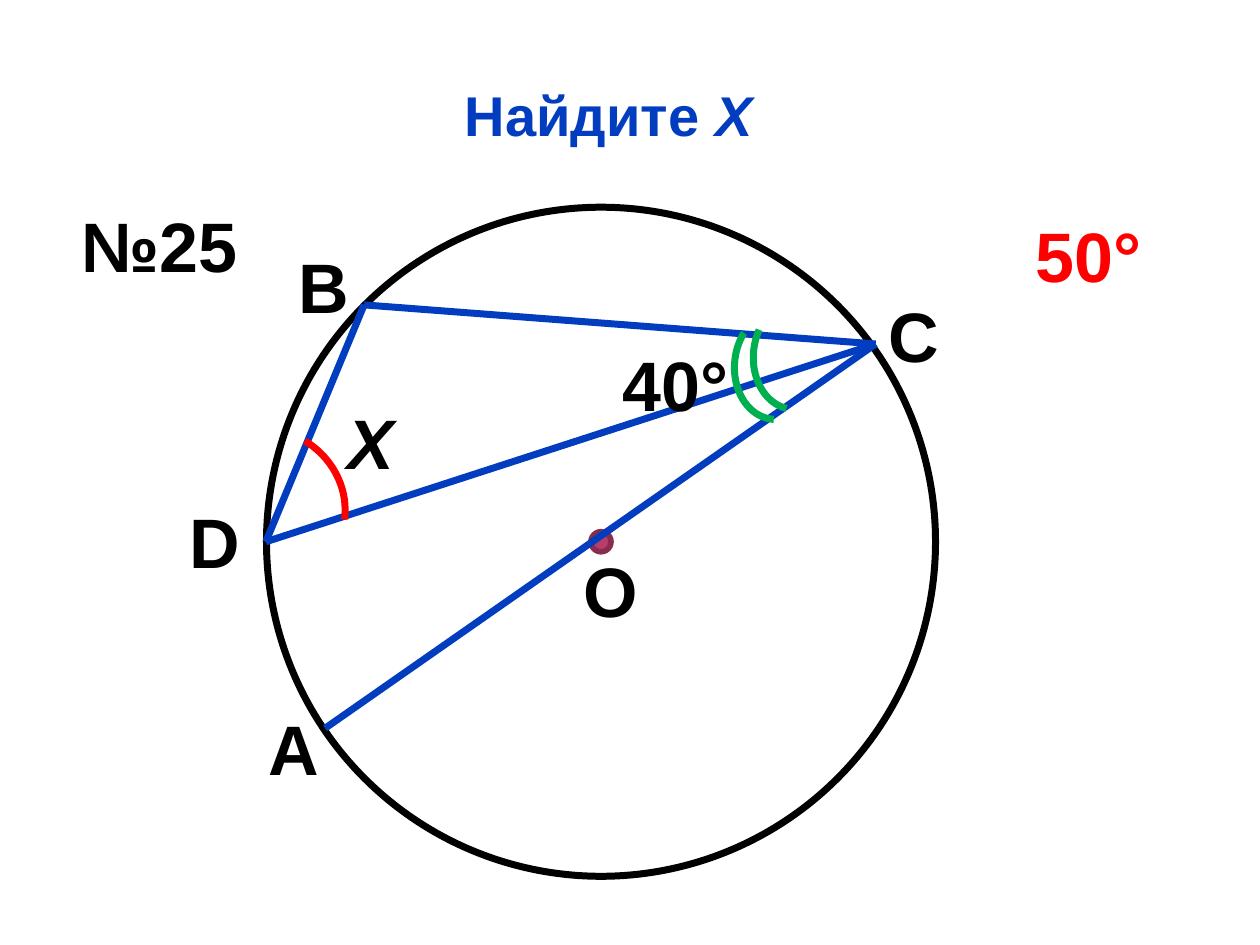
from lxml import etree
from pptx import Presentation
from pptx.dml.color import RGBColor
from pptx.enum.shapes import MSO_CONNECTOR, MSO_SHAPE
from pptx.enum.text import MSO_ANCHOR, PP_ALIGN
from pptx.oxml.ns import qn
from pptx.util import Inches, Pt

STRAIGHT = MSO_CONNECTOR.STRAIGHT
OVAL, ARC = MSO_SHAPE.OVAL, MSO_SHAPE.ARC
LEFT, CENTER = PP_ALIGN.LEFT, PP_ALIGN.CENTER
TOP, BOTTOM = MSO_ANCHOR.TOP, MSO_ANCHOR.BOTTOM

BLACK, BLUE, RED, GREEN = "000000", "033DBF", "FF0000", "00B050"
LINE_WIDTH = 4
LABEL_HEIGHT = 0.77
ARC_UNITS_PER_DEGREE = 0.6

TITLE = [("Найдите ", False), ("Х", True)]
TITLE_BOX = (0.51, 0.36, 8.64, 0.86)

CENTRE = (4.77, 4.3)
# diameter, fill, line colour, line width
CIRCLES = [(5.31, "FFFFFF", BLACK, LINE_WIDTH), (0.16, "B83D68", "882D4D", 3.15)]

POINTS = {"A": (2.58, 5.78), "B": (2.89, 2.42), "C": (6.95, 2.73), "D": (2.11, 4.3)}
CHORDS = ["AC", "DC", "BC", "BD"]

# box, rotation, start and end angle, colour
ANGLE_MARKS = [
    ((1.47, 3.37, 1.24, 1.31), 292.6, 9.6, 76, RED),
    ((5.89, 2.47, 0.87, 0.69), 276.5, 184.5, 297, GREEN),
    ((5.74, 2.55, 0.87, 0.69), 276.5, 178, 306.5, GREEN),
]

# text, left, top, width, colour, italic
LABELS = [
    ("Х", 2.66, 3.12, 1.02, BLACK, True),
    ("О", 4.53, 4.3, 0.62, BLACK, False),
    ("40°", 4.84, 2.66, 1.17, BLACK, False),
    ("А", 2.03, 5.55, 1.09, BLACK, False),
    ("D", 1.41, 3.91, 0.94, BLACK, False),
    ("В", 2.27, 1.88, 0.94, BLACK, False),
    ("С", 6.95, 2.27, 1.64, BLACK, False),
    ("№25", 0.55, 1.56, 1.48, BLACK, False),
    ("50°", 8.12, 1.64, 1.25, RED, False),
]


def rgb(value):
    """Turn a hex string into a colour."""
    return RGBColor.from_string(value)


def set_line(shape, color, width=LINE_WIDTH):
    """Colour and size the line of a shape or connector."""
    shape.line.color.rgb = rgb(color)
    shape.line.width = Pt(width)


def add_text(slide, box, runs, size, color, align=LEFT, anchor=TOP):
    """Add a bold text box from (text, italic) runs."""
    frame = slide.shapes.add_textbox(*map(Inches, box)).text_frame
    frame.word_wrap = True
    frame.vertical_anchor = anchor
    paragraph = frame.paragraphs[0]
    paragraph.alignment = align
    for text, italic in runs:
        run = paragraph.add_run()
        run.text = text
        run.font.name = "Arial"
        run.font.size = Pt(size)
        run.font.bold = True
        run.font.italic = italic
        run.font.color.rgb = rgb(color)


def add_circle(slide, diameter, fill, color, width):
    """Add a circle around the common centre."""
    left, top = (coordinate - diameter / 2 for coordinate in CENTRE)
    circle = slide.shapes.add_shape(OVAL, *map(Inches, (left, top, diameter, diameter)))
    circle.shadow.inherit = False
    circle.fill.solid()
    circle.fill.fore_color.rgb = rgb(fill)
    set_line(circle, color, width)


def add_chord(slide, start, end):
    """Join two named points with a straight line."""
    chord = slide.shapes.add_connector(STRAIGHT, *map(Inches, POINTS[start] + POINTS[end]))
    set_line(chord, BLUE)
    etree.SubElement(chord._element.spPr, qn("a:effectLst"))


def add_angle_mark(slide, box, rotation, start, end, color):
    """Add an arc that marks an angle."""
    arc = slide.shapes.add_shape(ARC, *map(Inches, box))
    arc.shadow.inherit = False
    arc.rotation = rotation
    arc.adjustments[0] = start * ARC_UNITS_PER_DEGREE
    arc.adjustments[1] = end * ARC_UNITS_PER_DEGREE
    arc.fill.background()
    set_line(arc, color)


def main():
    """Build the geometry slide and save it."""
    presentation = Presentation()
    presentation.slide_width, presentation.slide_height = Inches(10), Inches(7.5)
    slide = presentation.slides.add_slide(presentation.slide_layouts[6])
    add_text(slide, TITLE_BOX, TITLE, 32, BLUE, CENTER, BOTTOM)
    for circle in CIRCLES:
        add_circle(slide, *circle)
    for start, end in CHORDS:
        add_chord(slide, start, end)
    for mark in ANGLE_MARKS:
        add_angle_mark(slide, *mark)
    for text, left, top, width, color, italic in LABELS:
        add_text(slide, (left, top, width, LABEL_HEIGHT), [(text, italic)], 40, color)
    presentation.save("out.pptx")


if __name__ == "__main__":
    main()
